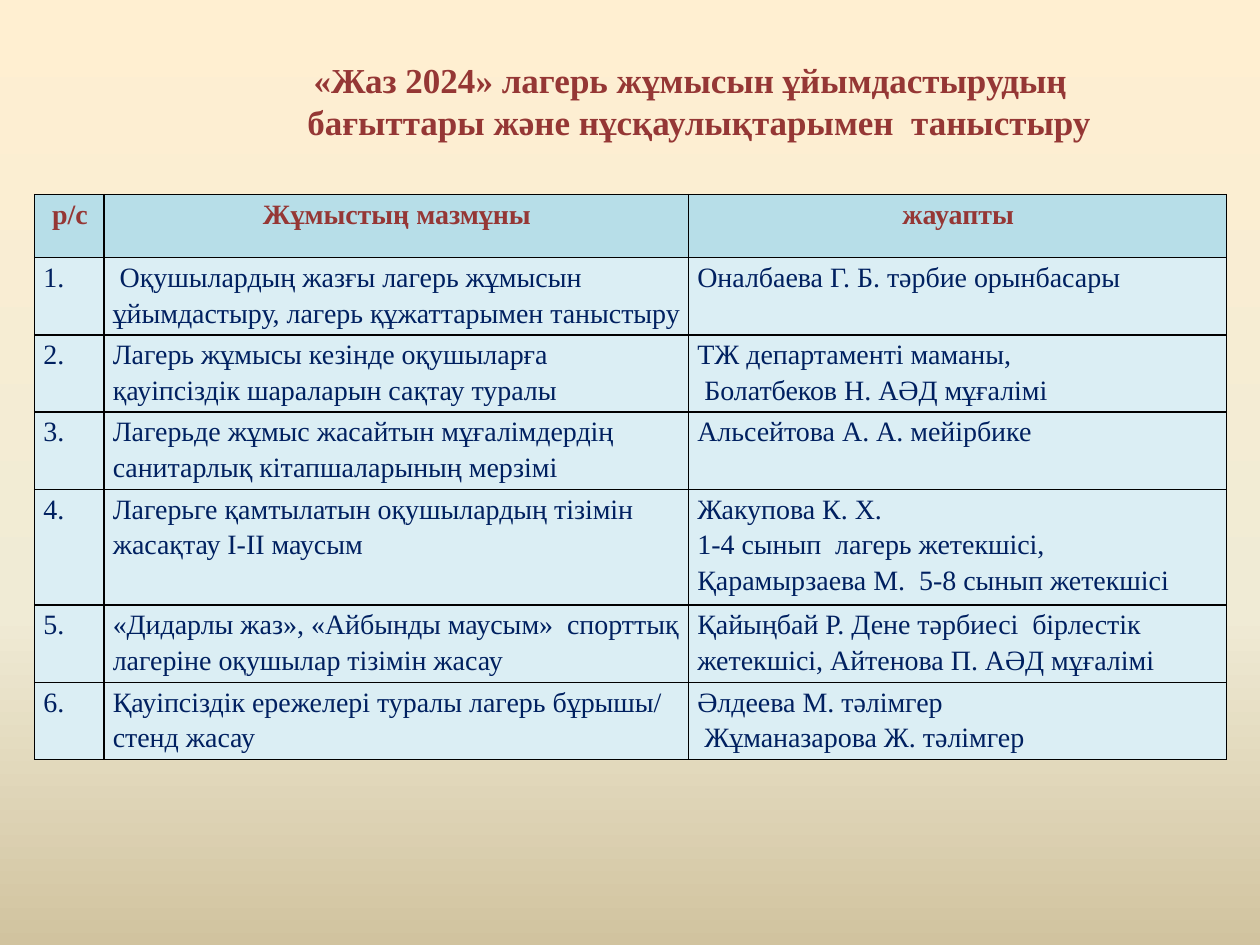
"""Builds the slide that lists summer camp tasks and the people responsible."""
from copy import deepcopy
from dataclasses import dataclass
from typing import NamedTuple

from lxml import etree
from pptx import Presentation
from pptx import util as u
from pptx.dml.color import RGBColor
from pptx.enum import text
from pptx.oxml import ns


@dataclass(frozen=True)
class Theme:
    font: str = "Times New Roman"
    title_size: int = 20
    table_size: int = 16
    accent: str = "953735"
    ink: str = "002060"
    header_fill: str = "B7DEE8"
    body_fill: str = "DBEEF4"
    border: str = "000000"
    border_width: int = 1
    line_spacing: float = 1.15
    backdrop: tuple = ((0, "FFEFD1"), (0.65, "F0EBD5"), (1, "D1C39F"))


class Area(NamedTuple):
    """A place on the slide in percent of its width and height."""
    left: float
    top: float
    width: float
    height: float


class Task(NamedTuple):
    number: str
    content: str
    responsible: str
    height: float


THEME = Theme()
WIDTH, HEIGHT = u.Inches(10), u.Inches(7.5)
TITLE_AREA = Area(13, 4.8, 85, 11.6)
TABLE_AREA = Area(2.75, 20.6, 94.6, 57.6)
COLUMNS = (0.55, 4.64, 4.27)
TITLE = "«Жаз 2024» лагерь жұмысын ұйымдастырудың  \vбағыттары және нұсқаулықтарымен  таныстыру"
TASKS = (
    Task("р/с", "Жұмыстың мазмұны", "жауапты", 0.5),
    Task("1.", " Оқушылардың жазғы лагерь жұмысын ұйымдастыру, лагерь құжаттарымен таныстыру",
         "Оналбаева Г. Б. тәрбие орынбасары", 0.6),
    Task("2.", "Лагерь жұмысы кезінде оқушыларға  қауіпсіздік шараларын сақтау туралы",
         "ТЖ департаменті маманы,\n Болатбеков Н. АӘД мұғалімі", 0.6),
    Task("3.", "Лагерьде жұмыс жасайтын мұғалімдердің санитарлық кітапшаларының мерзімі",
         "Альсейтова А. А. мейірбике", 0.6),
    Task("4.", "Лагерьге қамтылатын оқушылардың тізімін жасақтау І-ІІ маусым",
         "Жакупова К. Х.\n1-4 сынып  лагерь жетекшісі,\nҚарамырзаева М.  5-8 сынып жетекшісі", 0.85),
    Task("5.", "«Дидарлы жаз», «Айбынды маусым»  спорттық лагеріне оқушылар тізімін жасау",
         "Қайыңбай Р. Дене тәрбиесі  бірлестік жетекшісі, Айтенова П. АӘД мұғалімі", 0.6),
    Task("6.", "Қауіпсіздік ережелері туралы лагерь бұрышы/ стенд жасау",
         "Әлдеева М. тәлімгер\n Жұманазарова Ж. тәлімгер", 0.57),
)


def place(area: Area) -> tuple[int, int, int, int]:
    return (int(area.left * WIDTH / 100), int(area.top * HEIGHT / 100),
            int(area.width * WIDTH / 100), int(area.height * HEIGHT / 100))


def style_text(frame, size: int, color: str, bold: bool, centred: bool, spacing: float) -> None:
    for paragraph in frame.paragraphs:
        paragraph.alignment = text.PP_ALIGN.CENTER if centred else text.PP_ALIGN.LEFT
        paragraph.line_spacing = spacing
        paragraph.space_before = paragraph.space_after = u.Pt(0)
        for run in paragraph.runs:
            run.font.name = THEME.font
            run.font.size = u.Pt(size)
            run.font.bold = bold
            run.font.color.rgb = RGBColor.from_string(color)
        ending = etree.SubElement(paragraph._p, ns.qn("a:endParaRPr"), sz=str(size * 100))
        etree.SubElement(ending, ns.qn("a:latin"), typeface=THEME.font)


def paint_backdrop(slide) -> None:
    fill = slide.background.fill
    fill.gradient()
    fill.gradient_angle = 270
    stop_list = slide.element.find(".//" + ns.qn("a:gsLst"))
    stop_list.append(deepcopy(stop_list[0]))
    for stop, (position, color) in zip(fill.gradient_stops, THEME.backdrop):
        stop.position = position
        stop.color.rgb = RGBColor.from_string(color)


def add_title(slide) -> None:
    frame = slide.shapes.add_textbox(*place(TITLE_AREA)).text_frame
    frame.word_wrap = True
    frame.vertical_anchor = text.MSO_ANCHOR.MIDDLE
    frame.text = TITLE
    style_text(frame, THEME.title_size, THEME.accent, True, True, 1.0)


def add_borders(cell) -> None:
    properties = cell._tc.get_or_add_tcPr()
    for side in ("a:lnL", "a:lnR", "a:lnT", "a:lnB"):
        line = etree.SubElement(properties, ns.qn(side), w=str(u.Pt(THEME.border_width)))
        solid = etree.SubElement(line, ns.qn("a:solidFill"))
        etree.SubElement(solid, ns.qn("a:srgbClr"), val=THEME.border)


def fill_cell(cell, content: str, header: bool) -> None:
    cell.margin_left, cell.margin_right = u.Inches(0.07), u.Inches(0.06)
    cell.margin_top = cell.margin_bottom = 0
    add_borders(cell)
    cell.fill.solid()
    cell.fill.fore_color.rgb = RGBColor.from_string(THEME.header_fill if header else THEME.body_fill)
    cell.text_frame.text = content
    style_text(cell.text_frame, THEME.table_size, THEME.accent if header else THEME.ink,
               header, header, THEME.line_spacing)


def add_task_table(slide) -> None:
    table = slide.shapes.add_table(len(TASKS), len(COLUMNS), *place(TABLE_AREA)).table
    table.horz_banding = False
    for column, width in zip(table.columns, COLUMNS):
        column.width = u.Inches(width)
    for index, (row, task) in enumerate(zip(table.rows, TASKS)):
        row.height = u.Inches(task.height)
        for cell, content in zip(row.cells, (task.number, task.content, task.responsible)):
            fill_cell(cell, content, index == 0)


def main() -> None:
    deck = Presentation()
    deck.slide_width, deck.slide_height = WIDTH, HEIGHT
    slide = deck.slides.add_slide(deck.slide_layouts[6])
    paint_backdrop(slide)
    add_title(slide)
    add_task_table(slide)
    deck.save("out.pptx")


if __name__ == "__main__":
    main()
